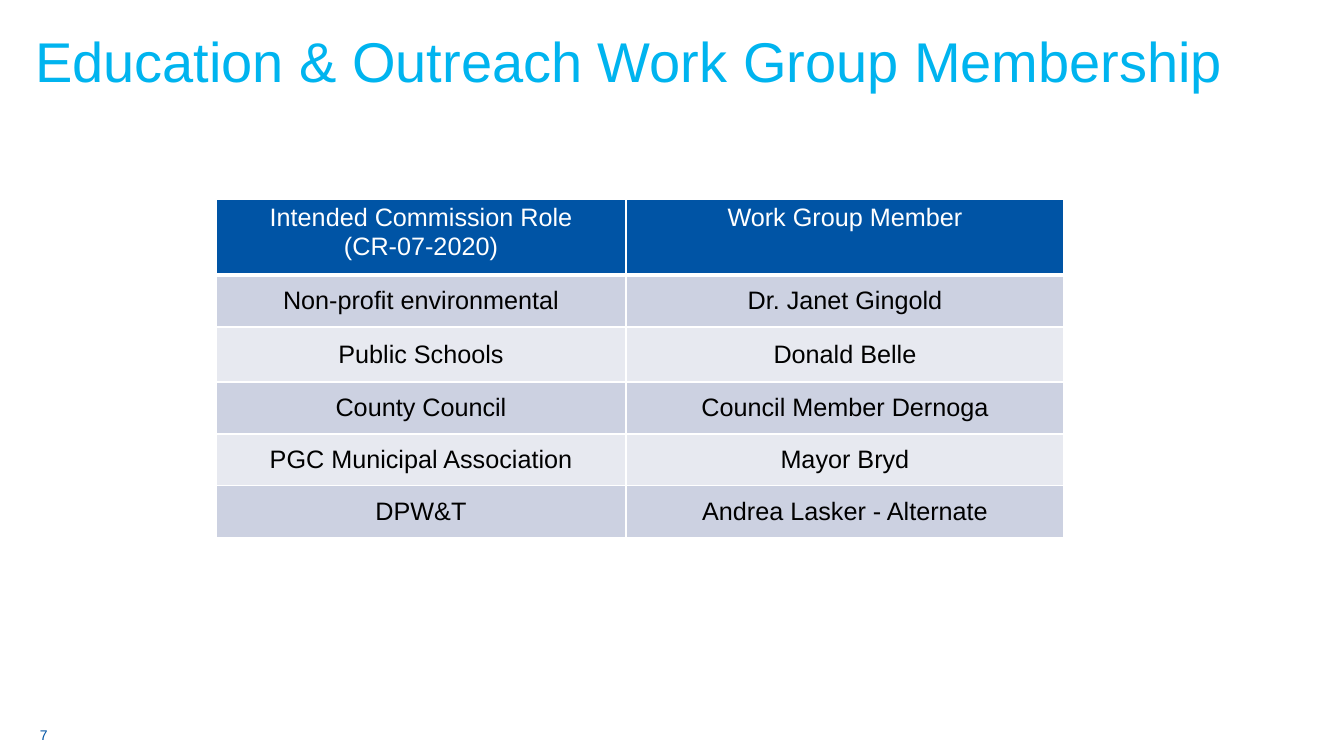
import pptx
import pptx.dml.color
import pptx.enum.text
import pptx.oxml
import pptx.oxml.ns
import pptx.util

SKY = pptx.dml.color.RGBColor(0x00, 0xB4, 0xEF)
BLUE = pptx.dml.color.RGBColor(0x00, 0x54, 0xA5)
WHITE = pptx.dml.color.RGBColor(0xFF, 0xFF, 0xFF)
BLACK = pptx.dml.color.RGBColor(0x00, 0x00, 0x00)
BAND_DARK = pptx.dml.color.RGBColor(0xCC, 0xD1, 0xE1)
BAND_LIGHT = pptx.dml.color.RGBColor(0xE7, 0xE9, 0xF0)
ANCHOR = pptx.enum.text.MSO_ANCHOR
SLIDE_WIDTH = 1344


def px(length):
    return round(length * 12192000 / SLIDE_WIDTH)


def set_font(paragraph, size, color):
    paragraph.font.name = "Arial"
    paragraph.font.size = pptx.util.Pt(size)
    paragraph.font.color.rgb = color


presentation = pptx.Presentation()
presentation.slide_width = px(SLIDE_WIDTH)
presentation.slide_height = px(756)
slide = presentation.slides.add_slide(presentation.slide_layouts[6])

# Title
title = slide.shapes.add_textbox(px(30), px(15), px(1259), px(80)).text_frame
title.word_wrap = True
title.vertical_anchor = ANCHOR.BOTTOM
title.margin_left = px(5)
title.margin_top = title.margin_bottom = 0
title.text = "Education & Outreach Work Group Membership"
title.paragraphs[0].line_spacing = 0.9
set_font(title.paragraphs[0], 40, SKY)

# Membership table
members = [
    ("Intended Commission Role\v(CR-07-2020)", "Work Group Member"),
    ("Non-profit environmental", "Dr. Janet Gingold"),
    ("Public Schools", "Donald Belle"),
    ("County Council", "Council Member Dernoga"),
    ("PGC Municipal Association", "Mayor Bryd"),
    ("DPW&T", "Andrea Lasker - Alternate"),
]
column_widths = [410, 438]
row_heights = [76, 52, 55, 52, 52, 52]
table = slide.shapes.add_table(
    len(members), len(column_widths), px(216), px(199),
    px(sum(column_widths)), px(sum(row_heights))).table
for column, width in zip(table.columns, column_widths):
    column.width = px(width)

for row_index, (row, height) in enumerate(zip(table.rows, row_heights)):
    row.height = px(height)
    is_header = row_index == 0
    if is_header:
        fill_color = BLUE
    else:
        fill_color = BAND_DARK if row_index % 2 else BAND_LIGHT
    # The rule under the header is thicker than the other borders
    border_widths = {"lnL": 1, "lnR": 1, "lnT": 3 if row_index == 1 else 1,
                     "lnB": 3 if is_header else 1}
    for cell, text in zip(row.cells, members[row_index]):
        cell.text = text
        cell.vertical_anchor = ANCHOR.TOP if is_header else ANCHOR.MIDDLE
        paragraph = cell.text_frame.paragraphs[0]
        paragraph.alignment = pptx.enum.text.PP_ALIGN.CENTER
        set_font(paragraph, 18, WHITE if is_header else BLACK)
        paragraph.font.bold = False
        properties = cell._tc.get_or_add_tcPr()
        for side, width in border_widths.items():
            properties.append(pptx.oxml.parse_xml(
                f'<a:{side} {pptx.oxml.ns.nsdecls("a")} w="{pptx.util.Pt(width)}">'
                f'<a:solidFill><a:srgbClr val="{WHITE}"/></a:solidFill></a:{side}>'))
        cell.fill.solid()
        cell.fill.fore_color.rgb = fill_color

# Slide number
number = slide.shapes.add_textbox(px(30), px(715), px(403), px(40)).text_frame
number.word_wrap = True
number.vertical_anchor = ANCHOR.MIDDLE
number.text = "7"
set_font(number.paragraphs[0], 10, BLUE)

presentation.save("out.pptx")
